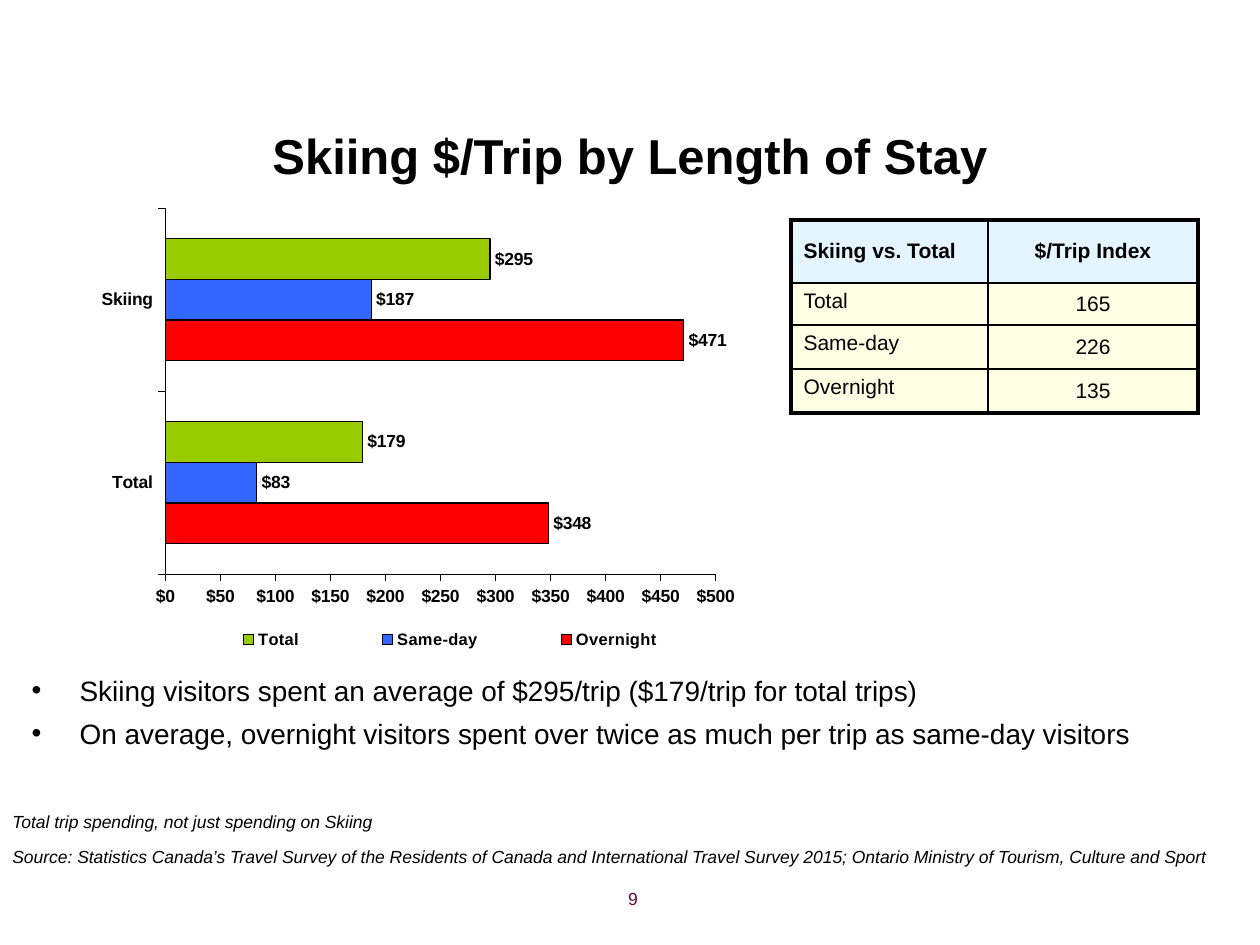
import lxml.etree
import pptx
import pptx.chart.data
import pptx.dml.color
import pptx.enum.chart
import pptx.enum.text
import pptx.oxml
import pptx.oxml.ns
import pptx.util

RGB = pptx.dml.color.RGBColor
BLACK = RGB(0, 0, 0)
WINE = RGB(0x66, 0x00, 0x33)
SKY = RGB(0xCC, 0xEC, 0xFF)
CREAM = RGB(0xFF, 0xFF, 0xCC)
RED = RGB(0xFF, 0, 0)
BLUE = RGB(0x33, 0x66, 0xFF)
GREEN = RGB(0x99, 0xCC, 0x00)

Pt = pptx.util.Pt
qn = pptx.oxml.ns.qn
ALIGN = pptx.enum.text.PP_ALIGN
ANCHOR = pptx.enum.text.MSO_ANCHOR
SCALE = 914400 / 126
DOLLAR = "\\$#,##0"


def px(*sizes):
    """Turn px lengths into a list of EMU."""
    return [pptx.util.Emu(round(size * SCALE)) for size in sizes]


def write(text, par=None, font=None, size=10, bold=False, italic=False,
          color=BLACK, align=None):
    """Format a font, or the text of a paragraph when one is given."""
    if par is not None:
        run = par.add_run()
        run.text = text
        par.alignment = align
        font = run.font
    font.name = "Arial"
    font.size = Pt(size)
    font.bold = bold
    font.italic = italic
    font.color.rgb = color


deck = pptx.Presentation()
deck.slide_width, deck.slide_height = px(1260, 945)
slide = deck.slides.add_slide(deck.slide_layouts[1])
shapes = slide.shapes

# Title and bullets
title, body = slide.placeholders
for holder, place in ((title, (63, 108, 1134, 94)), (body, (19, 674, 1197, 199))):
    holder.left, holder.top, holder.width, holder.height = px(*place)
    holder.text_frame.auto_size = pptx.enum.text.MSO_AUTO_SIZE.NONE
title.text_frame.vertical_anchor = ANCHOR.MIDDLE
write("Skiing $/Trip by Length of Stay", title.text_frame.paragraphs[0],
      size=28, bold=True, align=ALIGN.CENTER)

points = [
    "Skiing visitors spent an average of $295/trip ($179/trip for total trips)",
    "On average, overnight visitors spent over twice as much per trip as same-day visitors",
]
frame = body.text_frame
dent = px(48)[0]
for i, point in enumerate(points):
    par = frame.add_paragraph() if i else frame.paragraphs[0]
    par.line_spacing = 0.8
    par.space_before = Pt(9 if i else 0)
    props = par._p.get_or_add_pPr()
    props.set("marL", str(dent))
    props.set("indent", str(-dent))
    write(point, par, size=16)

# Index table
rows = [("Skiing vs. Total", "$/Trip Index"), ("Total", "165"),
        ("Same-day", "226"), ("Overnight", "135")]
table = shapes.add_table(4, 2, *px(791, 220, 407, 193)).table
table.first_row = table.horz_banding = False
for col, wide in zip(table.columns, px(197, 210)):
    col.width = wide
for row, high in zip(table.rows, px(63, 42, 44, 44)):
    row.height = high

for r, row in enumerate(rows):
    for c, text in enumerate(row):
        cell = table.cell(r, c)
        head = r == 0
        cell.vertical_anchor = ANCHOR.MIDDLE if head or c else ANCHOR.TOP
        if c and not head:
            cell.margin_left = cell.margin_right = 0
            cell.margin_top = cell.margin_bottom = 0
        write(text, cell.text_frame.paragraphs[0], size=12, bold=head,
              align=ALIGN.CENTER if c else ALIGN.LEFT)
        cell.fill.solid()
        cell.fill.fore_color.rgb = SKY if head else CREAM
        props = cell._tc.get_or_add_tcPr()
        tint = props.find(".//" + qn("a:srgbClr"))
        lxml.etree.SubElement(tint, qn("a:alpha"), val="50000")
        outer = {"L": c == 0, "R": c == 1, "T": head, "B": r == 3}
        for i, (side, edge) in enumerate(outer.items()):
            line = lxml.etree.Element(qn("a:ln" + side), w=str(Pt(2.25 if edge else 1)))
            fill = lxml.etree.SubElement(line, qn("a:solidFill"))
            lxml.etree.SubElement(fill, qn("a:srgbClr"), val=str(BLACK))
            props.insert(i, line)

# Bar chart
data = pptx.chart.data.CategoryChartData(number_format=DOLLAR)
data.categories = ["Total", "Skiing"]
data.add_series("Overnight", (348, 471))
data.add_series("Same-day", (83, 187))
data.add_series("Total", (179, 295))
kind = pptx.enum.chart.XL_CHART_TYPE.BAR_CLUSTERED
chart = shapes.add_chart(kind, *px(4, 199, 949, 469), data).chart
chart.has_title = False
write("", font=chart.font, size=15.5, bold=True)

plot = chart.plots[0]
plot.gap_width = 150
plot.overlap = 0
plot.vary_by_categories = False
for series, color in zip(plot.series, (RED, BLUE, GREEN)):
    series.format.fill.solid()
    series.format.fill.fore_color.rgb = color
    series.format.line.color.rgb = BLACK
    series.format.line.width = Pt(0.73)
    labels = series.data_labels
    labels.show_value = True
    labels.number_format = DOLLAR
    labels.number_format_is_linked = False
    labels.position = pptx.enum.chart.XL_LABEL_POSITION.OUTSIDE_END
    write("", font=labels.font, bold=True)

for axis in (chart.category_axis, chart.value_axis):
    axis.has_major_gridlines = False
    axis.major_tick_mark = pptx.enum.chart.XL_TICK_MARK.OUTSIDE
    axis.format.line.color.rgb = BLACK
    axis.format.line.width = Pt(0.18)
    write("", font=axis.tick_labels.font, bold=True)
axis.minimum_scale, axis.maximum_scale, axis.major_unit = 0, 500, 50
axis.tick_labels.number_format = DOLLAR
axis.tick_labels.number_format_is_linked = False

chart.has_legend = True
legend = chart.legend
legend.position = pptx.enum.chart.XL_LEGEND_POSITION.BOTTOM
legend.include_in_layout = False
write("", font=legend.font, size=9.4, bold=True)

layouts = [("plotArea", 0, (0.17, 0.02, 0.58, 0.78)),
           ("legend", 1, (0.17, 0.9, 0.6, 0.08))]
for part, spot, place in layouts:
    area = chart.element.find(".//" + qn("c:" + part))
    for old in area.findall(qn("c:layout")):
        area.remove(old)
    layout = lxml.etree.Element(qn("c:layout"))
    manual = lxml.etree.SubElement(layout, qn("c:manualLayout"))
    marks = [("xMode", "edge"), ("yMode", "edge"), *zip("xywh", place)]
    if part == "plotArea":
        marks.insert(0, ("layoutTarget", "inner"))
    for tag, val in marks:
        lxml.etree.SubElement(manual, qn("c:" + tag), val=str(val))
    area.insert(spot, layout)

# Notes under the bullets and page number
notes = [
    ("9", (357, 882, 293, 44), dict(color=WINE, align=ALIGN.RIGHT)),
    ("Source: Statistics Canada’s Travel Survey of the Residents of Canada and "
     "International Travel Survey 2015; Ontario Ministry of Tourism, Culture and Sport",
     (0, 840, 1235, 34), dict(italic=True)),
    ("Total trip spending, not just spending on Skiing",
     (0, 805, 1235, 34), dict(italic=True)),
]
for text, place, look in notes:
    frame = shapes.add_textbox(*px(*place)).text_frame
    frame.word_wrap = True
    write(text, frame.paragraphs[0], **look)

deck.save("out.pptx")
